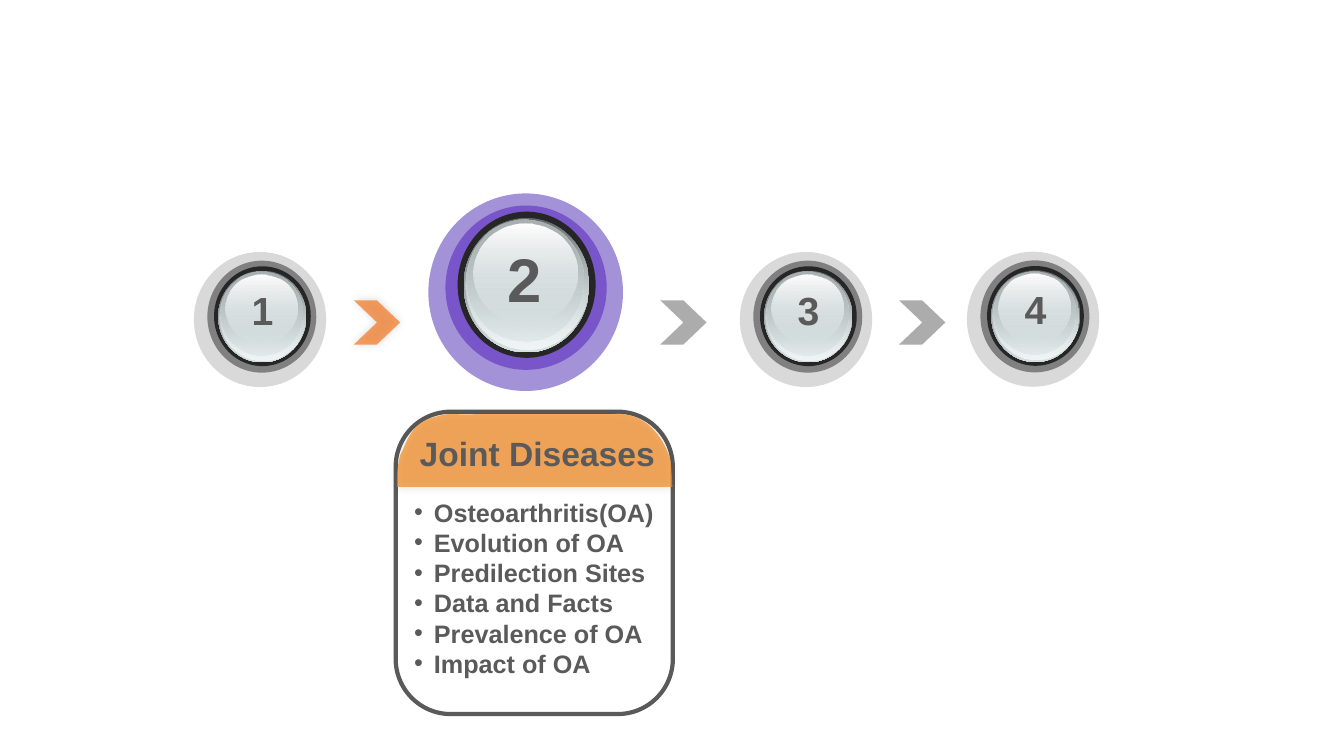
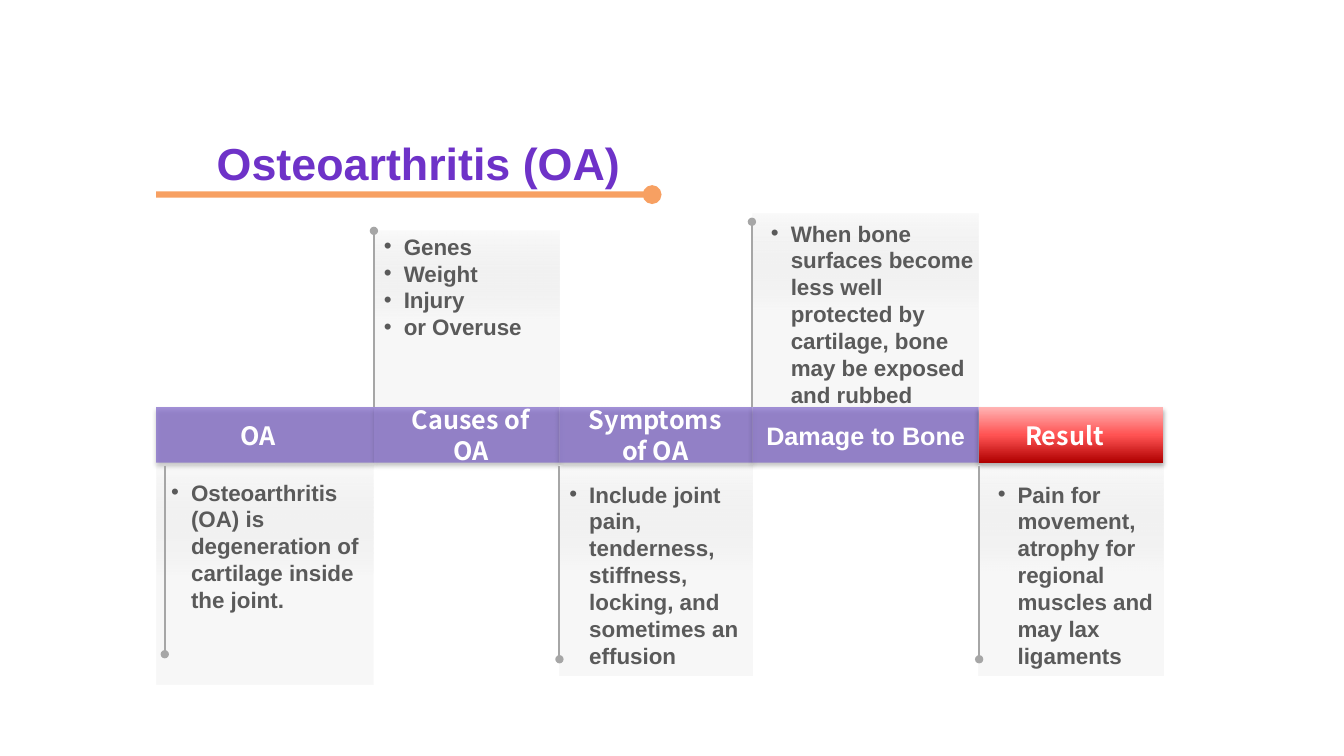
from pptx import Presentation
from pptx.dml.color import RGBColor
from pptx.enum.shapes import MSO_CONNECTOR, MSO_SHAPE
from pptx.enum.text import MSO_ANCHOR, PP_ALIGN
from pptx.oxml import parse_xml
from pptx.oxml.ns import nsdecls, qn
from pptx.util import Pt

GREY, ORANGE, PURPLE, LILAC, WHITE = "5A5A5A", "F57820", "6E32C8", "7D64C8", "FFFFFF"
PIN_GREY = "A6A6A6"
HEADING = dict(size=32, color=PURPLE)
BAR_FONT = "Noto Sans CJK KR"
SHADOW = (
    "<a:outerShdw %s blurRad='{}' dist='{}' dir='{}' rotWithShape='0'>"
    "<a:srgbClr val='000000'><a:alpha val='{}'/></a:srgbClr></a:outerShdw>" % nsdecls("a")
)
GLOW = SHADOW.format(Pt(6), 0, 315 * 60000, 20000)
DROP = SHADOW.format(Pt(3.5), Pt(2.2), 90 * 60000, 32000)


def paint(fill, *stops):
    """Fill with one (colour, alpha) or a downward gradient of (colour, alpha, position)."""
    if len(stops) == 1:
        color, alpha = stops[0]
        fill.solid()
        fill.fore_color.rgb = RGBColor.from_string(color)
        if alpha < 100:
            rgb = fill._xPr.find(qn("a:solidFill"))[0]
            rgb.append(parse_xml(f"<a:alpha {nsdecls('a')} val='{alpha * 1000}'/>"))
        return
    fill.gradient()
    fill.gradient_angle = 270
    stop_list = fill._xPr.find(qn("a:gradFill")).find(qn("a:gsLst"))
    for old_stop in list(stop_list):
        stop_list.remove(old_stop)
    for color, alpha, position in stops:
        stop_list.append(parse_xml(
            f"<a:gs {nsdecls('a')} pos='{position * 1000}'><a:srgbClr val='{color}'>"
            f"<a:alpha val='{alpha * 1000}'/></a:srgbClr></a:gs>"))


def write(holder, *lines, size=16, color=GREY, font="Arial", align=PP_ALIGN.LEFT,
          anchor=MSO_ANCHOR.TOP, bullet=False, wrap=True):
    frame = holder.text_frame
    frame.word_wrap = wrap
    frame.vertical_anchor = anchor
    for index, line in enumerate(lines):
        paragraph = frame.add_paragraph() if index else frame.paragraphs[0]
        paragraph.alignment = align
        if bullet:
            properties = paragraph._p.get_or_add_pPr()
            properties.set("marL", str(Pt(14.2)))
            properties.set("indent", str(-Pt(14.2)))
            properties.append(parse_xml(f"<a:buFont {nsdecls('a')} typeface='Arial'/>"))
            properties.append(parse_xml(f"<a:buChar {nsdecls('a')} char='•'/>"))
        run = paragraph.add_run()
        run.text = line
        run.font.name, run.font.size, run.font.bold = font, Pt(size), True
        paint(run.font.fill, (color, 100))


prs = Presentation()
prs.slide_width, prs.slide_height = Pt(960), Pt(540)

# Slide 1: agenda with the second step open
agenda = prs.slides.add_slide(prs.slide_layouts[6])

# Arrows between the steps
for left, color, alpha in [(252.7, ORANGE, 70), (471.6, GREY, 50), (642.2, GREY, 50)]:
    arrow = agenda.shapes.add_shape(MSO_SHAPE.CHEVRON, Pt(left), Pt(214.5), Pt(33.1), Pt(31.7))
    arrow.adjustments[0] = 0.525
    arrow.line.fill.background()
    arrow.shadow.inherit = False
    paint(arrow.fill, (color, alpha))
    if color == ORANGE:
        arrow._element.spPr.find(qn("a:effectLst")).append(parse_xml(GLOW))

# Glass layers, as shares of the dark bezel
glass = [
    ((0.044, 0.043, 0.91, 0.92), [("636869", 100, 0), ("D6E1E2", 100, 100)]),
    ((0.06, 0.05, 0.89, 0.89), [("D6E1E2", 0, 0), ("F1F5F5", 100, 100)]),
    ((0.065, 0.055, 0.845, 0.835), [("AAB2B3", 100, 0), ("D6E1E2", 48, 100)]),
    ((0.115, 0.08, 0.75, 0.675), [("FFFFFF", 100, 0), ("D6E1E2", 38, 100)]),
]
# Rings from back to front, the bezel last, measured from the button's corner
idle_rings = [((0, 0, 94.5, 96.5), "D9D9D9", 100), ((9.6, 6.2, 77.8, 80), "808080", 100),
              ((14.4, 10.2, 69.1, 71.3), "262626", 100)]
open_rings = [((12.2, 8.6, 115.2, 117.4), PURPLE, 100), ((0, 0, 139, 141.1), LILAC, 70),
              ((20.9, 13, 98.6, 104.4), "262626", 100)]
idle_label, open_label = (24.5, 20.8, 49, 41), (47.5, 30.2, 43.2, 66.2)

for number, left, top, rings, label, size in [
    ("1", 138.5, 180, idle_rings, idle_label, 28),
    ("2", 306, 138.2, open_rings, open_label, 44),
    ("3", 528.5, 180, idle_rings, idle_label, 28),
    ("4", 690.7, 179.8, idle_rings, idle_label, 28),
]:
    bezel_x, bezel_y, bezel_w, bezel_h = rings[-1][0]
    layers = [(box, [(color, alpha)]) for box, color, alpha in rings]
    layers += [((bezel_x + x * bezel_w, bezel_y + y * bezel_h, w * bezel_w, h * bezel_h), stops)
               for (x, y, w, h), stops in glass]
    for (x, y, w, h), stops in layers:
        disc = agenda.shapes.add_shape(MSO_SHAPE.OVAL, Pt(left + x), Pt(top + y), Pt(w), Pt(h))
        disc.line.fill.background()
        disc.shadow.inherit = False
        paint(disc.fill, *stops)
    x, y, w, h = label
    digit = agenda.shapes.add_textbox(Pt(left + x), Pt(top + y), Pt(w), Pt(h))
    write(digit, number, size=size, align=PP_ALIGN.CENTER, wrap=number != "2")

# Card with its topics
topics = agenda.shapes.add_textbox(Pt(288.7), Pt(351.4), Pt(203.8), Pt(162.7))
write(topics, "Osteoarthritis(OA)", "Evolution of OA", "Predilection Sites",
      "Data and Facts", "Prevalence of OA", "Impact of OA", size=18, bullet=True)
card = agenda.shapes.add_shape(MSO_SHAPE.ROUNDED_RECTANGLE, Pt(282.6), Pt(294.1), Pt(198), Pt(216))
card.adjustments[0] = 0.199
card.fill.background()
card.shadow.inherit = False
card.line.width = Pt(3)
paint(card.line.fill, (GREY, 100))

# Card header: Bézier arcs along the card's rounded top
start = (283.7, 347.8)
arcs = [
    ((283.7, 347.8), (282.2, 339.1), (285.8, 325.4)),
    ((290.2, 317.5), (293, 301.7), (309.6, 298.1)),
    ((325.4, 293.8), (319, 296.6), (339.1, 295.9)),
    ((358.6, 295.9), (409, 295.9), (427.7, 295.9)),
    ((446.4, 295.9), (438.5, 294.5), (449.3, 296.6)),
    ((460.8, 298.8), (472.3, 308.9), (478.8, 327.6)),
    ((480.2, 340.6), (480.2, 347.8), (480.2, 347.8)),
]
outline, point = [], start
for arc in arcs:
    for step in range(1, 9):
        t = step / 8
        weights = ((1 - t) ** 3, 3 * t * (1 - t) ** 2, 3 * t * t * (1 - t), t ** 3)
        corners = (point, *arc)
        outline.append(tuple(Pt(sum(k * c[axis] for k, c in zip(weights, corners)))
                             for axis in (0, 1)))
    point = arc[-1]
builder = agenda.shapes.build_freeform(Pt(start[0]), Pt(start[1]))
builder.add_line_segments(outline, close=True)
header = builder.convert_to_shape()
header.line.fill.background()
header.shadow.inherit = False
paint(header.fill, ("F58B1F", 70))
header._element.spPr.find(qn("a:effectLst")).append(parse_xml(GLOW))
header_label = agenda.shapes.add_textbox(Pt(286.6), Pt(306), Pt(194.4), Pt(36))
write(header_label, "Joint Diseases", size=24, align=PP_ALIGN.CENTER)

# Slide 2: osteoarthritis in five columns
disease = prs.slides.add_slide(prs.slide_layouts[5])
title = disease.shapes.title
title.left, title.top, title.width, title.height = Pt(147.6), Pt(92.9), Pt(396), Pt(46.1)
write(title, "Osteoarthritis (OA)", anchor=MSO_ANCHOR.MIDDLE, **HEADING)

band_top, band_height, panel_gap = 290.9, 39.6, 2.2
below_top = band_top + band_height + panel_gap
edges = [111.6, 267.1, 399.6, 537.7, 699.1, 830.9]
panel_stops = [("FAFAFA", 100, 0), ("D9D9D9", 20, 50)]
lilac_bar = [(LILAC, 70)]
red_bar = [("FFB3B3", 100, 0), ("FF5353", 100, 50), ("B00000", 100, 100)]

# Label, its left, width and font; bar fill; panel's far edge; pin x and tip; text box; bullets
columns = [
    ("OA", 125.3, 118.1, BAR_FONT, lilac_bar, 488.9, 117.7, 467.3, (115.2, 338.4, 151.9),
     ["Osteoarthritis (OA) is degeneration of cartilage inside the joint."]),
    ("Causes of OA", 279.4, 113.8, BAR_FONT, lilac_bar, 164.9, 267.1, 164.9, (267.1, 162.7, 162),
     ["Genes", "Weight", "Injury", "or Overuse"]),
    ("Symptoms of OA", 411.1, 113.8, BAR_FONT, lilac_bar, 482.4, 399.6, 470.9,
     (399.6, 339.8, 149.8),
     ["Include joint pain, tenderness, stiffness, locking, and sometimes an effusion"]),
    ("Damage to Bone", 537.7, 161.4, "Arial", lilac_bar, 152.6, 537.1, 158.4,
     (543.6, 153.4, 167.8),
     ["When bone surfaces become less well protected by cartilage, bone may be exposed and rubbed"]),
    ("Result", 701.3, 118.1, BAR_FONT, red_bar, 482.4, 699.4, 470.9, (705.6, 339.8, 149.8),
     ["Pain for movement, atrophy for regional muscles and may lax ligaments"]),
]
pins = [(111.6, 139, 465.8, 139, ORANGE, 70, 4.5)]
for left, right, column in zip(edges, edges[1:], columns):
    label, label_left, label_width, font, bar_fill, far, pin_x, tip, text_box, bullets = column
    above = far < band_top
    panel_top, panel_bottom = (far, band_top) if above else (below_top, far)
    pins.append((pin_x, band_top if above else below_top, pin_x, tip, PIN_GREY, 100, 1.5))

    # Panel and bar
    for top, bottom, stops in [(panel_top, panel_bottom, panel_stops),
                               (band_top, band_top + band_height, bar_fill)]:
        block = disease.shapes.add_shape(MSO_SHAPE.RECTANGLE, Pt(left), Pt(top),
                                         Pt(right - left), Pt(bottom - top))
        block.line.fill.background()
        block.shadow.inherit = False
        paint(block.fill, *stops)
    block._element.spPr.find(qn("a:effectLst")).append(parse_xml(DROP))

    # Bar label and bullets
    bar_label = disease.shapes.add_textbox(Pt(label_left), Pt(band_top),
                                           Pt(label_width), Pt(band_height))
    write(bar_label, label, size=18, color=WHITE, font=font, align=PP_ALIGN.CENTER,
          anchor=MSO_ANCHOR.MIDDLE)
    x, y, width = text_box
    details = disease.shapes.add_textbox(Pt(x), Pt(y), Pt(width), Pt(143))
    write(details, *bullets, bullet=True)

# Title rule and column pins, each ending in a dot
for x1, y1, x2, y2, color, alpha, weight in pins:
    pin = disease.shapes.add_connector(MSO_CONNECTOR.STRAIGHT, Pt(x1), Pt(y1), Pt(x2), Pt(y2))
    pin.line.width = Pt(weight)
    paint(pin.line.fill, (color, alpha))
    properties = pin._element.spPr
    properties.find(qn("a:ln")).append(parse_xml(f"<a:tailEnd {nsdecls('a')} type='oval'/>"))
    properties.append(parse_xml(f"<a:effectLst {nsdecls('a')}/>"))

prs.save("out.pptx")
